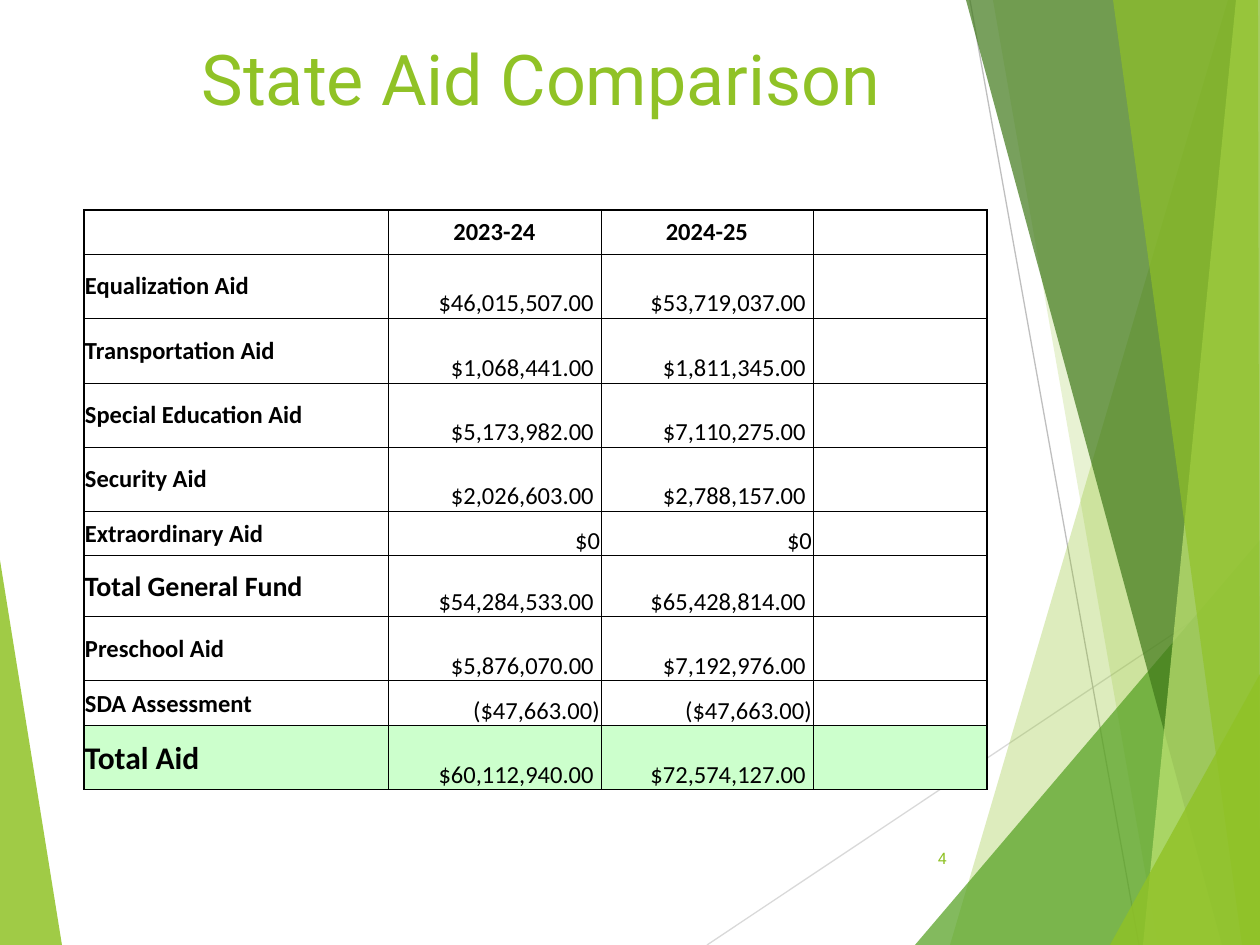
from lxml import etree
from pptx import Presentation
from pptx import util as u
from pptx.dml.color import RGBColor
from pptx.enum import shapes, text
from pptx.oxml import parse_xml
from pptx.oxml.ns import nsdecls, qn

PX = 914400 / 126
GREEN = "90C226"


def px(n):
    return u.Emu(round(n * PX))


def rgb(hex_color):
    return RGBColor.from_string(hex_color)


prs = Presentation()
prs.slide_width, prs.slide_height = px(1260), px(945)
s = prs.slides.add_slide(prs.slide_layouts[5])

# Background facets and rays, back to front: colour, opacity %, corners
facets = [
    (GREEN, 85, [(0, 560), (62, 945), (0, 945)]),
    ("D9D9D9", None, [(707, 945), (1260, 576)]),
    ("BFBFBF", None, [(970, 0), (1139, 945)]),
    (GREEN, 30, [(1228, 0), (950, 945), (1260, 945), (1260, 0)]),
    (GREEN, 20, [(993, 0), (1158, 945), (1260, 945), (1260, 0)]),
    ("54A021", 72, [(915, 945), (1260, 540), (1260, 945)]),
    ("3F7819", 70, [(966, 0), (1222, 945), (1260, 945), (1260, 0)]),
    ("C0E474", 70, [(1236, 0), (1143, 945), (1260, 945), (1260, 0)]),
    (GREEN, 65, [(1113, 0), (1242, 945), (1260, 945), (1258, 0)]),
    (GREEN, 80, [(1110, 945), (1260, 674), (1260, 945)]),
]
for color, opacity, points in facets:
    if opacity is None:
        (x1, y1), (x2, y2) = points
        ray = s.shapes.add_connector(shapes.MSO_CONNECTOR.STRAIGHT,
                                     px(x1), px(y1), px(x2), px(y2))
        ray.line.color.rgb = rgb(color)
        ray.line.width = u.Pt(0.75)
        etree.SubElement(ray._element.spPr, qn("a:effectLst"))
        continue
    builder = s.shapes.build_freeform(*points[0], scale=PX)
    builder.add_line_segments(points[1:], close=True)
    sp = builder.convert_to_shape()
    sp.shadow.inherit = False
    sp.line.fill.background()
    sp.fill.solid()
    sp.fill.fore_color.rgb = rgb(color)
    clr = sp._element.spPr.find(".//" + qn("a:srgbClr"))
    etree.SubElement(clr, qn("a:alpha"), val=str(opacity * 1000))

# Title
title = s.shapes.title
title.left, title.top, title.width, title.height = px(189), px(29), px(1071), px(189)
tf = title.text_frame
tf.text = "State Aid Comparison"
tf.vertical_anchor = text.MSO_ANCHOR.TOP
p = tf.paragraphs[0]
p.alignment = text.PP_ALIGN.LEFT
p.font.name, p.font.size, p.font.color.rgb = "Roboto", u.Pt(40), rgb(GREEN)

# State aid table: row height, label size, cell texts
rows = [
    (44, 14, ["", "2023-24", "2024-25", ""]),
    (64, 14, ["Equalization Aid", "$46,015,507.00", "$53,719,037.00", ""]),
    (65, 14, ["Transportation Aid", "$1,068,441.00", "$1,811,345.00", ""]),
    (64, 14, ["Special Education Aid", "$5,173,982.00", "$7,110,275.00", ""]),
    (64, 14, ["Security Aid", "$2,026,603.00", "$2,788,157.00", ""]),
    (45, 14, ["Extraordinary Aid", "$0", "$0", ""]),
    (61, 16, ["Total General Fund", "$54,284,533.00", "$65,428,814.00", ""]),
    (64, 14, ["Preschool Aid", "$5,876,070.00", "$7,192,976.00", ""]),
    (45, 14, ["SDA Assessment", "($47,663.00)", "($47,663.00)", ""]),
    (64, 18, ["Total Aid", "$60,112,940.00", "$72,574,127.00", ""]),
]
col_widths = [304, 213, 212, 174]
last_row, last_col = len(rows) - 1, len(col_widths) - 1
table = s.shapes.add_table(len(rows), len(col_widths), px(84), px(210),
                           px(sum(col_widths)), px(sum(row[0] for row in rows))).table
table.first_row = table.horz_banding = False
for column, width in zip(table.columns, col_widths):
    column.width = px(width)

for i, (height, label_size, values) in enumerate(rows):
    table.rows[i].height = px(height)
    for j, value in enumerate(values):
        cell = table.cell(i, j)
        is_amount = i > 0 and j > 0
        cell.text = value
        cell.margin_left = cell.margin_top = px(1)
        cell.margin_right = px(7 if value.endswith(".00") else 1)
        cell.margin_bottom = 0
        cell.vertical_anchor = text.MSO_ANCHOR.BOTTOM if is_amount else text.MSO_ANCHOR.MIDDLE
        p = cell.text_frame.paragraphs[0]
        if is_amount:
            p.alignment = text.PP_ALIGN.RIGHT
        else:
            p.alignment = text.PP_ALIGN.CENTER if i == 0 else text.PP_ALIGN.LEFT
        p.font.name, p.font.color.rgb = "Calibri", rgb("000000")
        p.font.size = u.Pt(label_size if j == 0 else 14)
        p.font.bold = not is_amount
        if i == last_row:
            cell.fill.solid()
            cell.fill.fore_color.rgb = rgb("CCFFCC")
        else:
            cell.fill.background()
        outer_sides = [("lnL", j == 0), ("lnR", j == last_col), ("lnT", i == 0), ("lnB", False)]
        for k, (side, outer) in enumerate(outer_sides):
            border = parse_xml(
                f'<a:{side} {nsdecls("a")} w="{u.Pt(1 if outer else 0.5)}">'
                f'<a:solidFill><a:srgbClr val="000000"/></a:solidFill></a:{side}>')
            cell._tc.get_or_add_tcPr().insert(k, border)

# Slide number
number = s.shapes.add_textbox(px(888), px(833), px(71), px(50))
tf = number.text_frame
tf.word_wrap = True
tf.vertical_anchor = text.MSO_ANCHOR.MIDDLE
tf.text = "4"
p = tf.paragraphs[0]
p.alignment = text.PP_ALIGN.RIGHT
p.font.name, p.font.size, p.font.color.rgb = "Roboto", u.Pt(9), rgb(GREEN)

prs.save("out.pptx")
